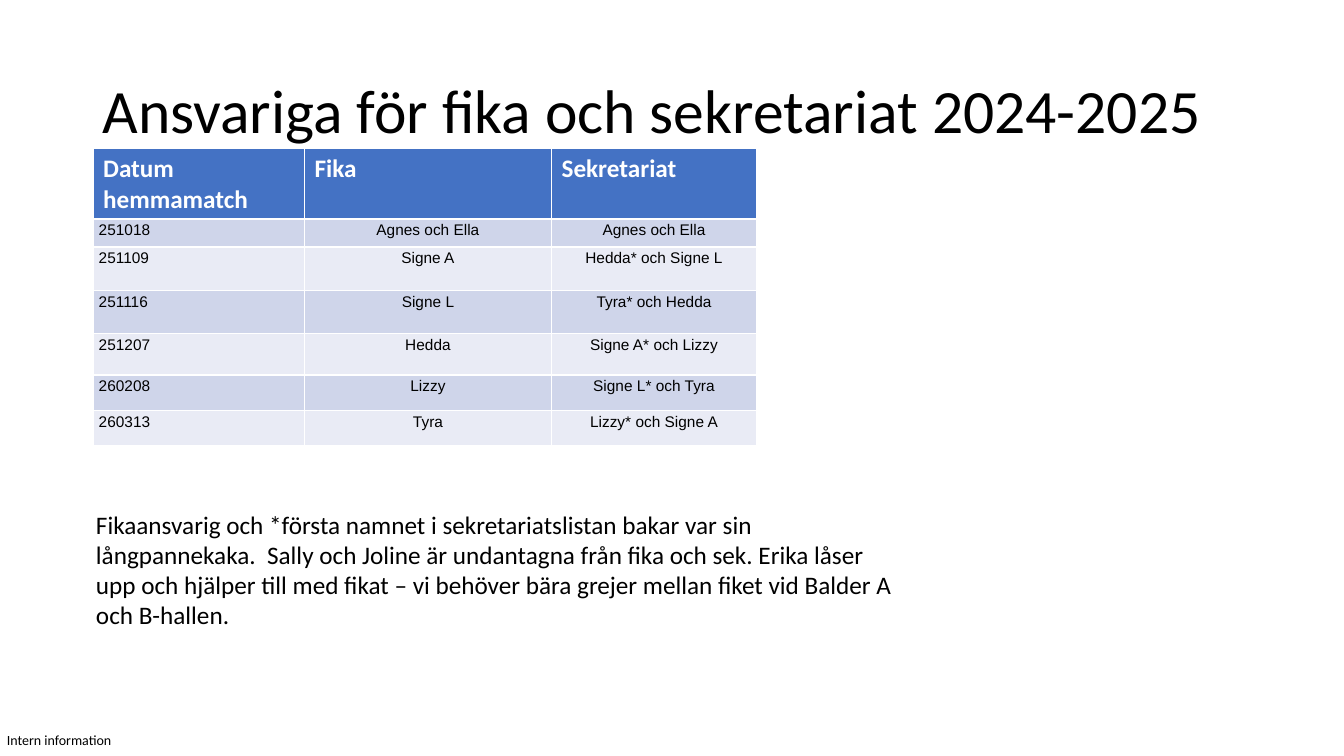
from pptx import Presentation
from pptx.dml.color import RGBColor
from pptx.enum.text import MSO_ANCHOR, MSO_AUTO_SIZE, PP_ALIGN
from pptx.util import Pt

BLACK = RGBColor(0x00, 0x00, 0x00)
WHITE = RGBColor(0xFF, 0xFF, 0xFF)
HEADER_BLUE = RGBColor(0x44, 0x72, 0xC4)
BAND_DARK = RGBColor(0xCF, 0xD5, 0xEA)
BAND_LIGHT = RGBColor(0xE9, 0xEB, 0xF5)

TITLE = "Ansvariga för fika och sekretariat 2024-2025"
SCHEDULE = [
    ("Datum hemmamatch", "Fika", "Sekretariat"),
    ("251018", "Agnes och Ella", "Agnes och Ella"),
    ("251109", "Signe A", "Hedda* och Signe L"),
    ("251116", "Signe L", "Tyra* och Hedda"),
    ("251207", "Hedda", "Signe A* och Lizzy"),
    ("260208", "Lizzy", "Signe L* och Tyra"),
    ("260313", "Tyra", "Lizzy* och Signe A"),
]
COLUMN_WIDTHS = [151, 176.5, 146.5]
ROW_HEIGHTS = [48.5, 20, 31, 31, 29.5, 25.5, 25]
NOTE = (
    "Fikaansvarig och *första namnet i sekretariatslistan bakar var sin "
    "långpannekaka.  Sally och Joline är undantagna från fika och sek. "
    "Erika låser upp och hjälper till med fikat – vi behöver bära grejer "
    "mellan fiket vid Balder A och B-hallen."
)


def style_text(frame, size, color=BLACK, name="Calibri", bold=False,
               align=PP_ALIGN.LEFT):
    for para in frame.paragraphs:
        para.alignment = align
        for span in para.runs:
            span.font.size = Pt(size)
            span.font.name = name
            span.font.bold = bold
            span.font.color.rgb = color


def set_margins(target, horizontal, vertical):
    target.margin_left = target.margin_right = Pt(horizontal)
    target.margin_top = target.margin_bottom = Pt(vertical)


def place_title(page, left, top, width, height):
    title = page.shapes.title
    title.left, title.top = Pt(left), Pt(top)
    title.width, title.height = Pt(width), Pt(height)
    frame = title.text_frame
    frame.text = TITLE
    frame.vertical_anchor = MSO_ANCHOR.MIDDLE
    frame.auto_size = MSO_AUTO_SIZE.NONE
    frame.paragraphs[0].line_spacing = 0.9
    style_text(frame, 44)


def fill_cell(cell, text, row, column):
    cell.text_frame.text = text
    cell.fill.solid()
    if row == 0:
        cell.fill.fore_color.rgb = HEADER_BLUE
        style_text(cell.text_frame, 18, WHITE, bold=True)
        return
    cell.fill.fore_color.rgb = BAND_DARK if row % 2 else BAND_LIGHT
    set_margins(cell, 4, 2)
    align = PP_ALIGN.CENTER if column else PP_ALIGN.LEFT
    style_text(cell.text_frame, 11, name="Arial", align=align)


def add_schedule(page, left, top):
    table = page.shapes.add_table(
        len(SCHEDULE), len(COLUMN_WIDTHS), Pt(left), Pt(top),
        Pt(sum(COLUMN_WIDTHS)), Pt(sum(ROW_HEIGHTS))).table
    for column, width in zip(table.columns, COLUMN_WIDTHS):
        column.width = Pt(width)
    for row, height in zip(table.rows, ROW_HEIGHTS):
        row.height = Pt(height)
    for row, entries in enumerate(SCHEDULE):
        for column, text in enumerate(entries):
            fill_cell(table.cell(row, column), text, row, column)


def add_text(page, text, size, left, top, width, height):
    box = page.shapes.add_textbox(Pt(left), Pt(top), Pt(width), Pt(height))
    frame = box.text_frame
    frame.word_wrap = True
    frame.text = text
    style_text(frame, size)
    return frame


def main():
    deck = Presentation()
    deck.slide_width, deck.slide_height = Pt(960), Pt(540)
    page = deck.slides.add_slide(deck.slide_layouts[5])
    label = add_text(page, "Intern information", 10, 5, 522.5, 78, 12)
    set_margins(label, 0, 0)
    place_title(page, 66, 28.75, 828, 104.4)
    add_schedule(page, 66.5, 106)
    add_text(page, NOTE, 18, 61.5, 360, 587, 94.5)
    deck.save("out.pptx")


if __name__ == "__main__":
    main()
